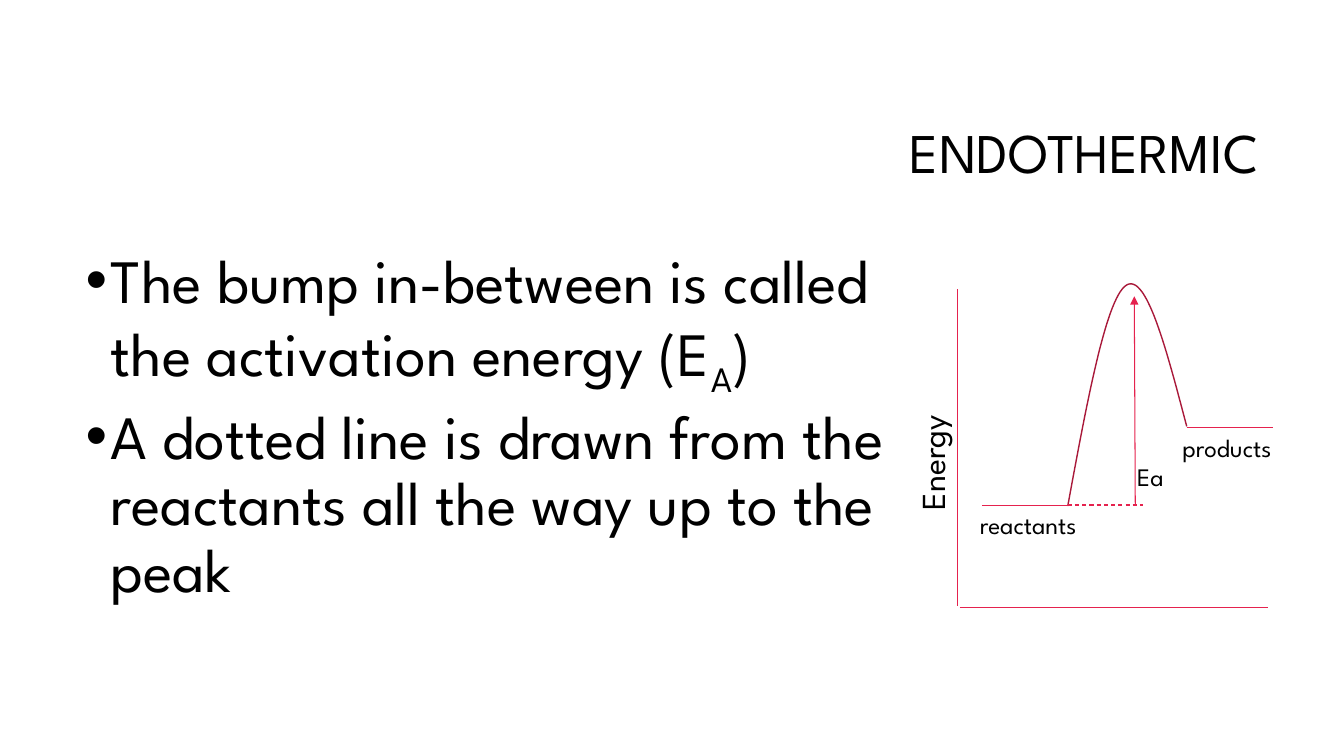
from typing import NamedTuple

from lxml import etree
from pptx import Presentation
from pptx import util as u
from pptx.dml.color import RGBColor
from pptx.enum import dml, shapes, text
from pptx.oxml.ns import qn

FONT = "League Spartan"
BLACK = RGBColor(0x00, 0x00, 0x00)
RED = RGBColor(0xE5, 0x22, 0x4E)
CURVE_RED = RGBColor(0xA9, 0x19, 0x3A)

Point = tuple[float, float]


class Label(NamedTuple):
    words: str
    left: float
    top: float
    width: float = 1.56
    height: float = 0.4
    size: float = 18
    rotation: float = 0


class Line(NamedTuple):
    start: Point
    end: Point
    dashed: bool = False
    arrow: bool = False


LABELS = [
    Label("Energy", 8.08, 3.75, 2.32, 0.5, size=24, rotation=270),
    Label("reactants", 9.62, 5.0),
    Label("products", 11.63, 4.24),
    Label("Ea", 11.18, 4.53),
]
LINES = [
    Line((9.5, 2.87), (9.5, 6.01)),  # energy axis
    Line((9.52, 6.03), (12.58, 6.03)),  # progress axis
    Line((11.77, 4.24), (12.63, 4.24)),  # products level
    Line((9.74, 5.02), (10.59, 5.02)),  # reactants level
    Line((10.59, 5.01), (11.34, 5.01), dashed=True),
    Line((11.26, 5.02), (11.25, 2.94), arrow=True),  # activation energy
]
CURVE = [
    [(11.77, 4.23), (11.57, 3.47), (11.37, 2.7), (11.17, 2.83)],
    [(11.17, 2.83), (10.97, 2.96), (10.78, 3.99), (10.59, 5.02)],
]
BULLETS = [
    [("The bump in-between is called the activation energy (E", 0), ("A", -25), (")", 0)],
    [("A dotted line is drawn from the reactants all the way up to the peak", 0)],
]


def add_span(para, words: str, *, size: float, baseline: int = 0) -> None:
    span = para.add_run()
    span.text = words
    span.font.name = FONT
    span.font.size = u.Pt(size)
    span.font.color.rgb = BLACK
    if baseline:
        span._r.get_or_add_rPr().set("baseline", str(baseline * 1000))


def add_box(page, left: float, top: float, width: float, height: float):
    box = page.shapes.add_textbox(*map(u.Inches, (left, top, width, height)))
    box.text_frame.word_wrap = True
    return box


def add_label(page, label: Label) -> None:
    box = add_box(page, label.left, label.top, label.width, label.height)
    box.rotation = label.rotation
    add_span(box.text_frame.paragraphs[0], label.words, size=label.size)


def add_line(page, line: Line) -> None:
    connector = page.shapes.add_connector(
        shapes.MSO_CONNECTOR.STRAIGHT, *map(u.Inches, line.start + line.end))
    connector.line.color.rgb = RED
    connector.line.width = u.Pt(0.75)
    if line.dashed:
        connector.line.dash_style = dml.MSO_LINE.DASH
    properties = connector._element.spPr
    if line.arrow:
        etree.SubElement(properties.find(qn("a:ln")), qn("a:tailEnd"), type="triangle")
    etree.SubElement(properties, qn("a:effectLst"))


def bezier_points(controls: list[Point], steps: int = 30) -> list[Point]:
    points = []
    for step in range(1, steps + 1):
        t = step / steps
        weights = ((1 - t) ** 3, 3 * t * (1 - t) ** 2, 3 * t * t * (1 - t), t ** 3)
        points.append((sum(w * x for w, (x, _) in zip(weights, controls)),
                       sum(w * y for w, (_, y) in zip(weights, controls))))
    return points


def add_curve(page) -> None:
    builder = page.shapes.build_freeform(*map(u.Inches, CURVE[0][0]))
    for controls in CURVE:
        builder.add_line_segments(
            [(u.Inches(x), u.Inches(y)) for x, y in bezier_points(controls)], close=False)
    curve = builder.convert_to_shape()
    curve.shadow.inherit = False
    curve.fill.background()
    curve.line.color.rgb = CURVE_RED
    curve.line.width = u.Pt(1)


def add_title(page) -> None:
    title = page.shapes.title
    title.left, title.top = u.Inches(3.16), u.Inches(0.84)
    title.width, title.height = u.Inches(9.42), u.Inches(1.41)
    frame = title.text_frame
    frame.auto_size = text.MSO_AUTO_SIZE.NONE
    frame.vertical_anchor = text.MSO_ANCHOR.MIDDLE
    para = frame.paragraphs[0]
    para.alignment = text.PP_ALIGN.RIGHT
    para.line_spacing = 0.9
    add_span(para, "ENDOTHERMIC", size=40)


def add_bullets(page) -> None:
    frame = add_box(page, 0.75, 2.43, 8.36, 5.14).text_frame
    for index, parts in enumerate(BULLETS):
        para = frame.add_paragraph() if index else frame.paragraphs[0]
        properties = para._p.get_or_add_pPr()
        properties.set("marL", str(u.Inches(0.25)))
        properties.set("indent", str(-u.Inches(0.25)))
        etree.SubElement(properties, qn("a:buFont"), typeface="Arial")
        etree.SubElement(properties, qn("a:buChar"), char="•")
        para.line_spacing = 0.9
        para.space_before = u.Pt(10 if index else 0)
        for words, baseline in parts:
            add_span(para, words, size=44, baseline=baseline)


def main() -> None:
    deck = Presentation()
    deck.slide_width, deck.slide_height = u.Inches(13.33), u.Inches(7.5)
    page = deck.slides.add_slide(deck.slide_layouts[5])

    # Title and explanation
    add_title(page)
    add_bullets(page)

    # Energy diagram
    add_curve(page)
    for line in LINES:
        add_line(page, line)
    for label in LABELS:
        add_label(page, label)

    deck.save("out.pptx")


if __name__ == "__main__":
    main()
